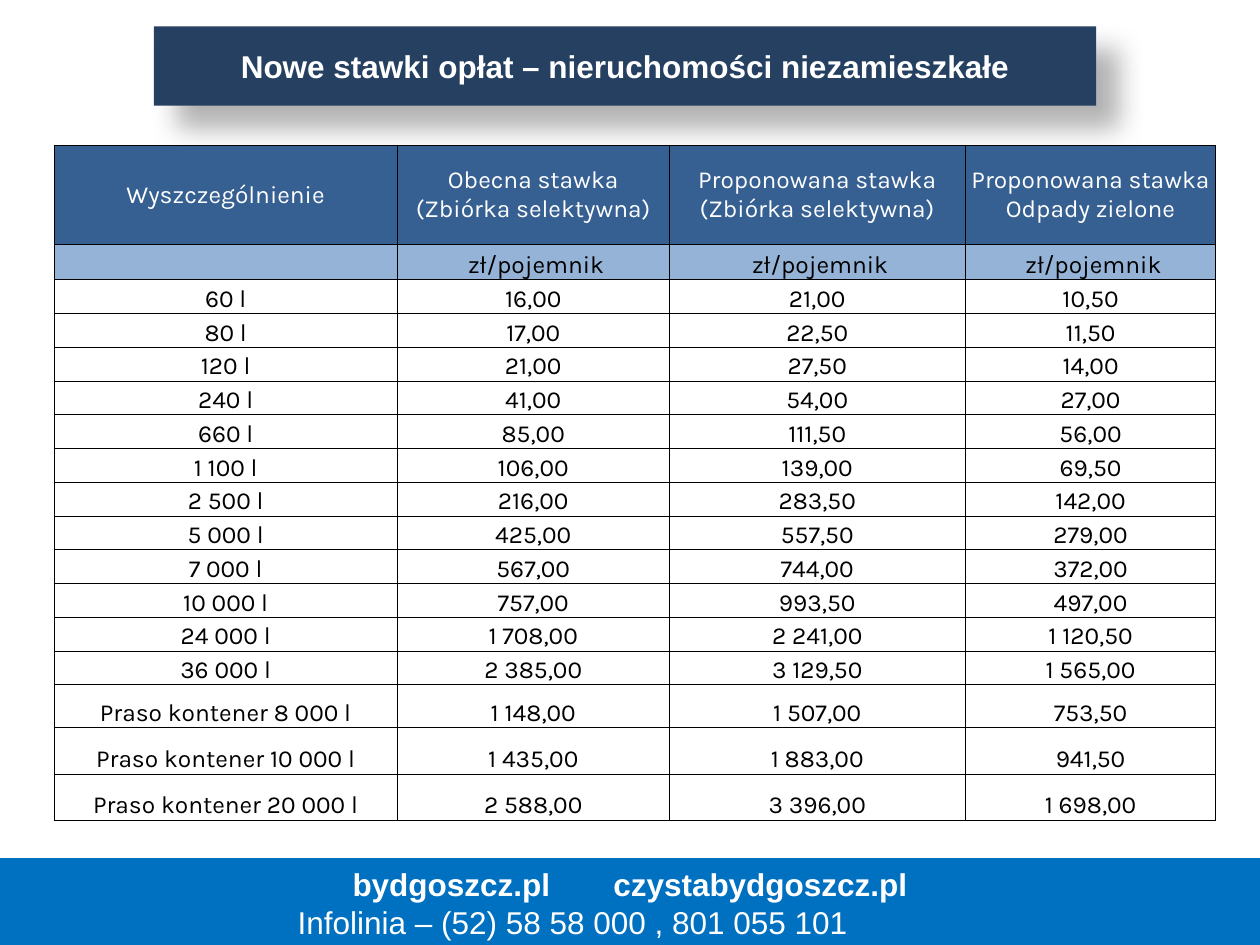
from lxml import etree
from pptx import Presentation
from pptx import util as u
from pptx.dml.color import RGBColor
from pptx.enum import shapes, text
from pptx.oxml import parse_xml
from pptx.oxml.ns import nsdecls, qn

WHITE = RGBColor(0xFF, 0xFF, 0xFF)
BLACK = RGBColor(0, 0, 0)
NAVY = RGBColor(0x25, 0x40, 0x61)
STEEL = RGBColor(0x36, 0x60, 0x92)
PALE = RGBColor(0x95, 0xB3, 0xD7)
BLUE = RGBColor(0, 0x70, 0xC0)

TITLE = "Nowe stawki opłat – nieruchomości niezamieszkałe"
HEADS = [
    ["Wyszczególnienie"],
    ["Obecna stawka", "(Zbiórka selektywna)"],
    ["Proponowana stawka", "(Zbiórka selektywna)"],
    ["Proponowana stawka", "Odpady zielone"],
]
UNITS = [""] + [" zł/pojemnik"] * 3
RATES = [
    ["60 l", "16,00", "21,00", "10,50"],
    ["80 l", "17,00", "22,50", "11,50"],
    ["120 l", "21,00", "27,50", "14,00"],
    ["240 l", "41,00", "54,00", "27,00"],
    ["660 l", "85,00", "111,50", "56,00"],
    ["1 100 l", "106,00", "139,00", "69,50"],
    ["2 500 l", "216,00", "283,50", "142,00"],
    ["5 000 l", "425,00", "557,50", "279,00"],
    ["7 000 l", "567,00", "744,00", "372,00"],
    ["10 000 l", "757,00", "993,50", "497,00"],
    ["24 000 l", "1 708,00", "2 241,00", "1 120,50"],
    ["36 000 l", "2 385,00", "3 129,50", "1 565,00"],
    ["Praso kontener 8 000 l", "1 148,00", "1 507,00", "753,50"],
    ["Praso kontener 10 000 l", "1 435,00", "1 883,00", "941,50"],
    ["Praso kontener 20 000 l", "2 588,00", "3 396,00", "1 698,00"],
]
COLS = [6.92, 5.48, 5.97, 5.05]
ROWS = [2] + [0.68] * 13 + [0.87, 0.93, 0.93]


def add_run(para, words, size, font, color, bold=False):
    para.alignment = text.PP_ALIGN.CENTER
    run = para.add_run()
    run.text = words
    run.font.size = u.Pt(size)
    run.font.name = font
    run.font.bold = bold
    run.font.color.rgb = color


def add_box(slide, box, color, width):
    shape = slide.shapes.add_shape(
        shapes.MSO_SHAPE.RECTANGLE, *[u.Cm(n) for n in box])
    shape.shadow.inherit = False
    shape.fill.solid()
    shape.fill.fore_color.rgb = color
    shape.line.color.rgb = color
    shape.line.width = u.Pt(width)
    return shape


def set_title(slide, panel):
    title = slide.shapes.title
    panel.element.addnext(title.element)
    title.left, title.top = u.Cm(3.1), u.Cm(0.53)
    title.width, title.height = u.Cm(19), u.Cm(1.6)
    # Rounded banner with a soft shadow
    props = title.element.spPr
    props.append(parse_xml(
        f'<a:prstGeom {nsdecls("a")} prst="roundRect"><a:avLst/></a:prstGeom>'))
    title.fill.solid()
    title.fill.fore_color.rgb = NAVY
    props.append(parse_xml(
        f'<a:effectLst {nsdecls("a")}><a:outerShdw blurRad="{u.Pt(15)}" '
        f'dist="{u.Pt(18)}" dir="2700000" algn="tl" rotWithShape="0">'
        '<a:srgbClr val="000000"><a:alpha val="30000"/></a:srgbClr>'
        '</a:outerShdw></a:effectLst>'))
    frame = title.text_frame
    frame.vertical_anchor = text.MSO_ANCHOR.MIDDLE
    add_run(frame.paragraphs[0], TITLE, 18, "Arial", WHITE, True)


def add_edges(cell):
    props = cell._tc.get_or_add_tcPr()
    for side in ("lnL", "lnR", "lnT", "lnB"):
        line = etree.SubElement(props, qn(f"a:{side}"), w=str(u.Pt(0.5)))
        fill = etree.SubElement(line, qn("a:solidFill"))
        etree.SubElement(fill, qn("a:srgbClr"), val=str(BLACK))


def fill_cell(cell, lines, back, color, anchor):
    add_edges(cell)
    cell.fill.solid()
    cell.fill.fore_color.rgb = back
    cell.vertical_anchor = anchor
    cell.margin_left = cell.margin_right = 0
    cell.margin_top = cell.margin_bottom = 0
    frame = cell.text_frame
    for i, words in enumerate(lines):
        para = frame.add_paragraph() if i else frame.paragraphs[0]
        add_run(para, words, 14, "Karla", color)


def add_rates(slide):
    grid = slide.shapes.add_table(
        len(ROWS), len(COLS), u.Cm(1.09), u.Cm(2.93),
        u.Cm(sum(COLS)), u.Cm(sum(ROWS))).table
    for col, width in zip(grid.columns, COLS):
        col.width = u.Cm(width)
    for row, height in zip(grid.rows, ROWS):
        row.height = u.Cm(height)
    for c, lines in enumerate(HEADS):
        fill_cell(grid.cell(0, c), lines, STEEL, WHITE, text.MSO_ANCHOR.MIDDLE)
    for r, row in enumerate([UNITS] + RATES, 1):
        back = PALE if r == 1 else WHITE
        for c, words in enumerate(row):
            fill_cell(grid.cell(r, c), [words], back, BLACK,
                      text.MSO_ANCHOR.BOTTOM)


def add_footer(slide):
    frame = add_box(slide, (0, 17.32, 25.4, 1.8), BLUE, 0.75).text_frame
    frame.vertical_anchor = text.MSO_ANCHOR.TOP
    add_run(frame.paragraphs[0], "bydgoszcz.pl \t czystabydgoszcz.pl",
            18, "Arial", WHITE, True)
    phone = frame.add_paragraph()
    add_run(phone, "Infolinia – (52) 58 58 000 , 801 055 101",
            18, "Arial", WHITE)
    # The phone line starts left of centre
    phone.alignment = text.PP_ALIGN.LEFT
    phone._p.get_or_add_pPr().set("marL", str(u.Cm(5.75)))


def main():
    deck = Presentation()
    deck.slide_width, deck.slide_height = u.Cm(25.4), u.Cm(19.05)
    slide = deck.slides.add_slide(deck.slide_layouts[5])
    # White panel behind the table
    panel = add_box(slide, (1.7, 2.51, 22.6, 14.6), WHITE, 2)
    set_title(slide, panel)
    add_rates(slide)
    add_footer(slide)
    deck.save("out.pptx")


if __name__ == "__main__":
    main()
